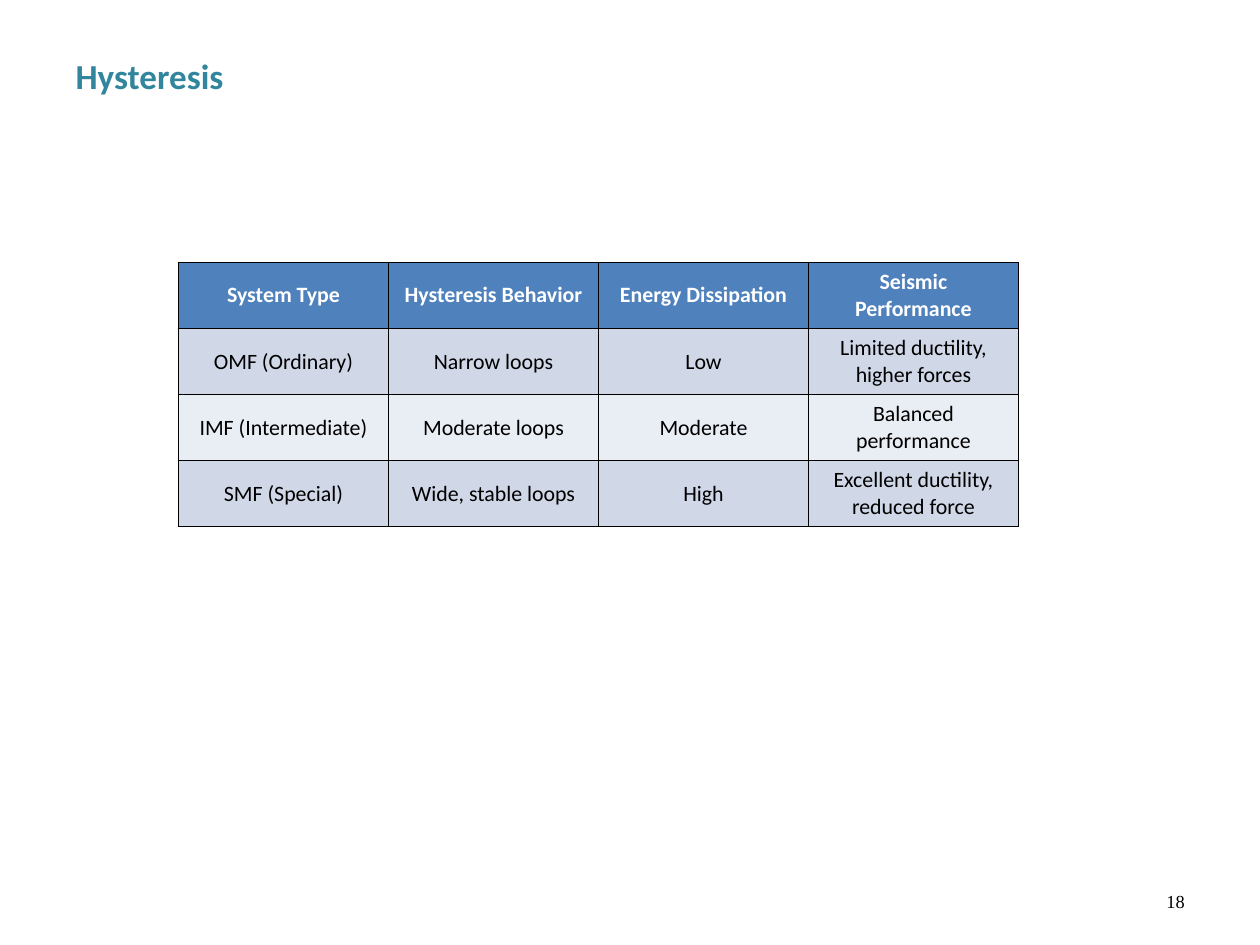
from lxml.etree import SubElement
from pptx import Presentation
from pptx.dml.color import RGBColor
from pptx.enum.text import MSO_ANCHOR, MSO_AUTO_SIZE, PP_ALIGN
from pptx.oxml.ns import qn
from pptx.util import Pt

TEAL = RGBColor(0x31, 0x85, 0x9C)
HEADER_BLUE = RGBColor(0x4F, 0x81, 0xBD)
BAND_DARK = RGBColor(0xD0, 0xD8, 0xE8)
BAND_LIGHT = RGBColor(0xE9, 0xED, 0xF4)
WHITE = RGBColor(0xFF, 0xFF, 0xFF)
BLACK = RGBColor(0x00, 0x00, 0x00)
NUMBER_BLACK = RGBColor(0x01, 0x00, 0x00)

SYSTEMS = [
    ("System Type", "Hysteresis Behavior", "Energy Dissipation", "Seismic Performance"),
    ("OMF (Ordinary)", "Narrow loops", "Low", "Limited ductility, higher forces"),
    ("IMF (Intermediate)", "Moderate loops", "Moderate", "Balanced performance"),
    ("SMF (Special)", "Wide, stable loops", "High", "Excellent ductility, reduced force"),
]


def set_text(text_frame, text, font_name, size, color, bold=False,
             alignment=PP_ALIGN.LEFT):
    text_frame.text = text
    paragraph = text_frame.paragraphs[0]
    paragraph.alignment = alignment
    font = paragraph.runs[0].font
    font.name, font.size, font.bold = font_name, Pt(size), bold
    font.color.rgb = color


def add_title(slide, left, top, width, height):
    title = slide.shapes.title
    title.left, title.top = Pt(left), Pt(top)
    title.width, title.height = Pt(width), Pt(height)
    text_frame = title.text_frame
    text_frame.vertical_anchor = MSO_ANCHOR.TOP
    text_frame.auto_size = MSO_AUTO_SIZE.NONE
    set_text(text_frame, "Hysteresis", "Calibri", 20, TEAL, bold=True)
    text_frame.paragraphs[0].space_after = Pt(1.5)


def add_borders(cell):
    properties = cell._tc.get_or_add_tcPr()
    for side in ("a:lnL", "a:lnR", "a:lnT", "a:lnB"):
        line = SubElement(properties, qn(side), w=str(Pt(1)))
        fill = SubElement(line, qn("a:solidFill"))
        SubElement(fill, qn("a:srgbClr"), val=str(BLACK))


def add_systems_table(slide, left, top, width, height):
    rows, columns = len(SYSTEMS), len(SYSTEMS[0])
    table = slide.shapes.add_table(rows, columns, Pt(left), Pt(top),
                                   Pt(width), Pt(height)).table
    for row_index, texts in enumerate(SYSTEMS):
        is_header = row_index == 0
        band = BAND_DARK if row_index % 2 else BAND_LIGHT
        for column_index, text in enumerate(texts):
            cell = table.cell(row_index, column_index)
            add_borders(cell)  # borders come before the fill in the cell properties
            cell.fill.solid()
            cell.fill.fore_color.rgb = HEADER_BLUE if is_header else band
            cell.vertical_anchor = MSO_ANCHOR.MIDDLE
            set_text(cell.text_frame, text, "Calibri", 12.5,
                     WHITE if is_header else BLACK, is_header, PP_ALIGN.CENTER)


def add_slide_number(slide, left, top, width, height):
    box = slide.shapes.add_textbox(Pt(left), Pt(top), Pt(width), Pt(height))
    text_frame = box.text_frame
    text_frame.word_wrap = True
    text_frame.vertical_anchor = MSO_ANCHOR.MIDDLE
    set_text(text_frame, "18", "Times New Roman", 10.5, NUMBER_BLACK,
             alignment=PP_ALIGN.RIGHT)


def main():
    presentation = Presentation()
    presentation.slide_width, presentation.slide_height = Pt(720), Pt(540)
    title_only = presentation.slide_layouts[5]
    slide = presentation.slides.add_slide(title_only)

    add_title(slide, 36, 27.5, 270, 31.7)
    add_systems_table(slide, 102, 150, 480, 149)
    add_slide_number(slide, 516, 500.5, 168, 28.8)

    presentation.save("out.pptx")


if __name__ == "__main__":
    main()
